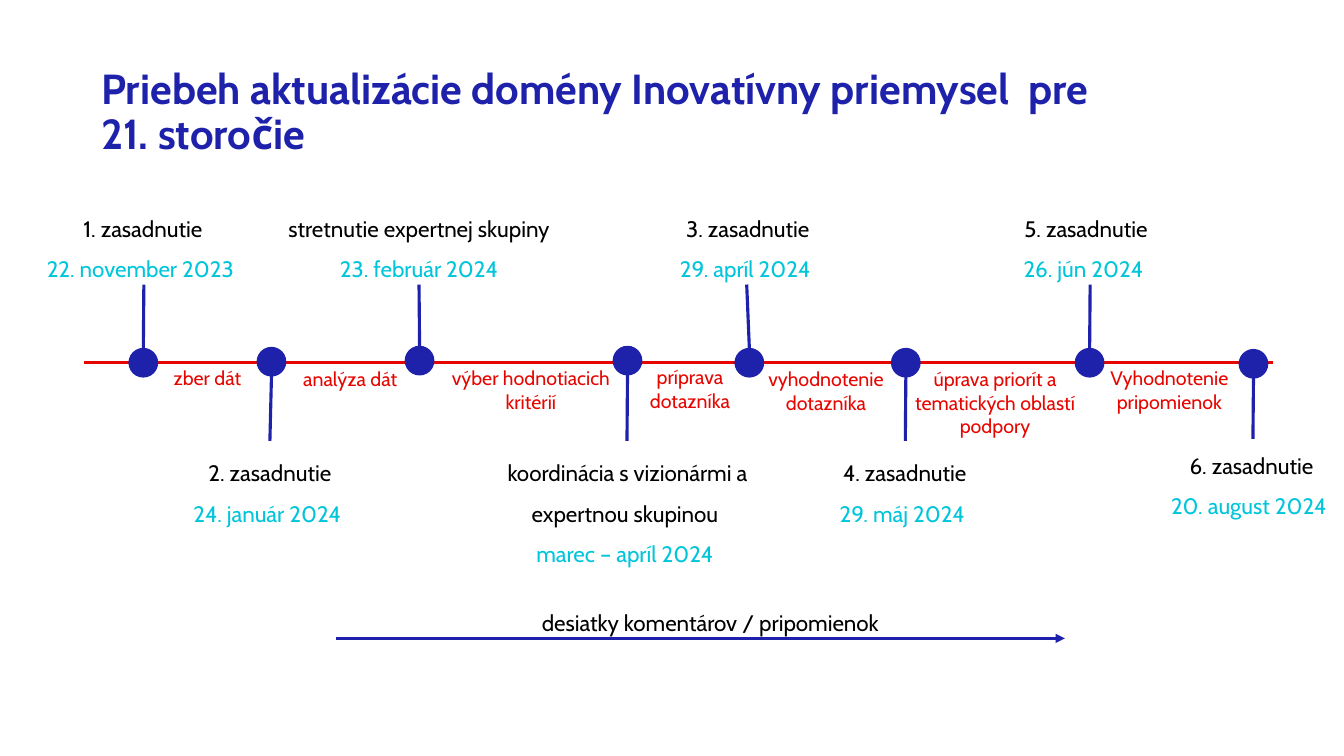
"""Builds the timeline slide of the domain update."""
from dataclasses import dataclass

from lxml import etree
from pptx import Presentation
from pptx import util as u
from pptx.dml.color import RGBColor
from pptx.enum import shapes, text
from pptx.oxml.ns import qn


@dataclass(frozen=True)
class Theme:
    font: str = "Cabin"
    navy: str = "1E22AA"
    red: str = "E60600"
    cyan: str = "00C5DB"
    black: str = "000000"
    title: int = 30
    label: int = 16
    phase: int = 14
    line: float = 2.25
    outline: int = 1


class Deck:
    def __init__(self, prs, theme):
        self.theme = theme
        self.slide = prs.slides.add_slide(prs.slide_layouts[6])

    def px(self, *values):
        return [u.Emu(v * 9525) for v in values]

    def text(self, box, lines, size, spacing=1.0, align="CENTER", bold=False, grow=True):
        tf = self.slide.shapes.add_textbox(*self.px(*box)).text_frame
        fit = text.MSO_AUTO_SIZE.SHAPE_TO_FIT_TEXT if grow else text.MSO_AUTO_SIZE.NONE
        frame = {"word_wrap": True, "auto_size": fit,
                 "vertical_anchor": text.MSO_ANCHOR.TOP}
        for name, value in frame.items():
            setattr(tf, name, value)
        for i, (line, color) in enumerate(lines):
            p = tf.add_paragraph() if i else tf.paragraphs[0]
            p.alignment = text.PP_ALIGN[align]
            p.line_spacing = spacing
            r = p.add_run()
            r.text = line
            font = {"name": self.theme.font, "size": u.Pt(size), "bold": bold}
            for name, value in font.items():
                setattr(r.font, name, value)
            r.font.color.rgb = RGBColor.from_string(color)

    def line(self, start, end, color, arrow=False):
        cx = self.slide.shapes.add_connector(
            shapes.MSO_CONNECTOR.STRAIGHT, *self.px(*start, *end))
        cx.line.color.rgb = RGBColor.from_string(color)
        cx.line.width = u.Pt(self.theme.line)
        if arrow:
            etree.SubElement(cx.line._get_or_add_ln(), qn("a:tailEnd"), type="triangle")
        etree.SubElement(cx._element.spPr, qn("a:effectLst"))
        return cx

    def dot(self, x, y, size):
        sp = self.slide.shapes.add_shape(
            shapes.MSO_SHAPE.OVAL, *self.px(x, y, size, size))
        color = RGBColor.from_string(self.theme.navy)
        sp.shadow.inherit = False
        sp.fill.solid()
        sp.fill.fore_color.rgb = color
        sp.line.color.rgb = color
        sp.line.width = u.Pt(self.theme.outline)
        return sp

    def stem(self, dot, x, y, above):
        cx = self.line((x, y), (x, y), self.theme.navy)
        cx.end_connect(dot, 0 if above else 2)
        if not above:
            # An ellipse has eight sites, and its bottom one is number 4.
            cx._element.nvCxnSpPr.cNvCxnSpPr.endCxn.idx = 4

    def milestone(self, dot_at, stem_to, box, name, date):
        t = self.theme
        dot = self.dot(*dot_at, 27)
        self.stem(dot, *stem_to, above=stem_to[1] < dot_at[1])
        self.text(box, [(name, t.black), (date, t.cyan)], t.label, 1.5)


MILESTONES = [
    ((123, 332), (137, 271), (12, 187, 248, 84), "1. zasadnutie", "22. november 2023 "),
    ((245, 331), (257, 420), (133, 420, 248, 84), "2. zasadnutie", "24. január 2024 "),
    ((386, 330), (399, 271), (235, 187, 328, 84),
     "stretnutie expertnej skupiny", "23. február 2024"),
    ((584, 330), (597, 420), (460, 420, 275, 122),
     "koordinácia s vizionármi a expertnou skupinou ", "marec – apríl 2024 "),
    ((700, 332), (711, 271), (588, 187, 248, 84), "3. zasadnutie", "29. apríl 2024 "),
    ((849, 332), (862, 420), (732, 420, 259, 84), "4. zasadnutie", "29. máj 2024 "),
    ((1024, 332), (1038, 271), (910, 187, 248, 84), "5. zasadnutie", "26. jún 2024 "),
    ((1180, 333), (1193, 418), (1062, 413, 259, 84), "6. zasadnutie", "20. august 2024 "),
]

PHASES = [
    ((105, 344, 185, 33), "zber dát"),
    ((249, 345, 169, 33), "analýza dát"),
    ((418, 344, 175, 55), "výber hodnotiacich kritérií"),
    ((585, 343, 144, 55), "príprava dotazníka"),
    ((712, 345, 149, 55), "vyhodnotenie dotazníka"),
    ((860, 345, 175, 78), "úprava priorít a tematických oblastí podpory"),
    ((1026, 344, 175, 55), "Vyhodnotenie pripomienok"),
]


def main():
    prs = Presentation()
    prs.slide_width, prs.slide_height = u.Inches(13.33), u.Inches(7.5)
    t = Theme()
    s = Deck(prs, t)
    s.text((87, 60, 975, 61),
           [("Priebeh aktualizácie domény Inovatívny priemysel  pre 21. storočie", t.navy)],
           t.title, 0.9, "LEFT", bold=True, grow=False)
    s.line((80, 345), (1212, 345), t.red)
    for milestone in MILESTONES:
        s.milestone(*milestone)
    for box, name in PHASES:
        s.text(box, [(name, t.red)], t.phase)
    s.line((320, 608), (1014, 608), t.navy, arrow=True)
    s.text((354, 563, 645, 44), [("desiatky komentárov / pripomienok", t.black)],
           t.label, 1.5)
    prs.save("out.pptx")


if __name__ == "__main__":
    main()
